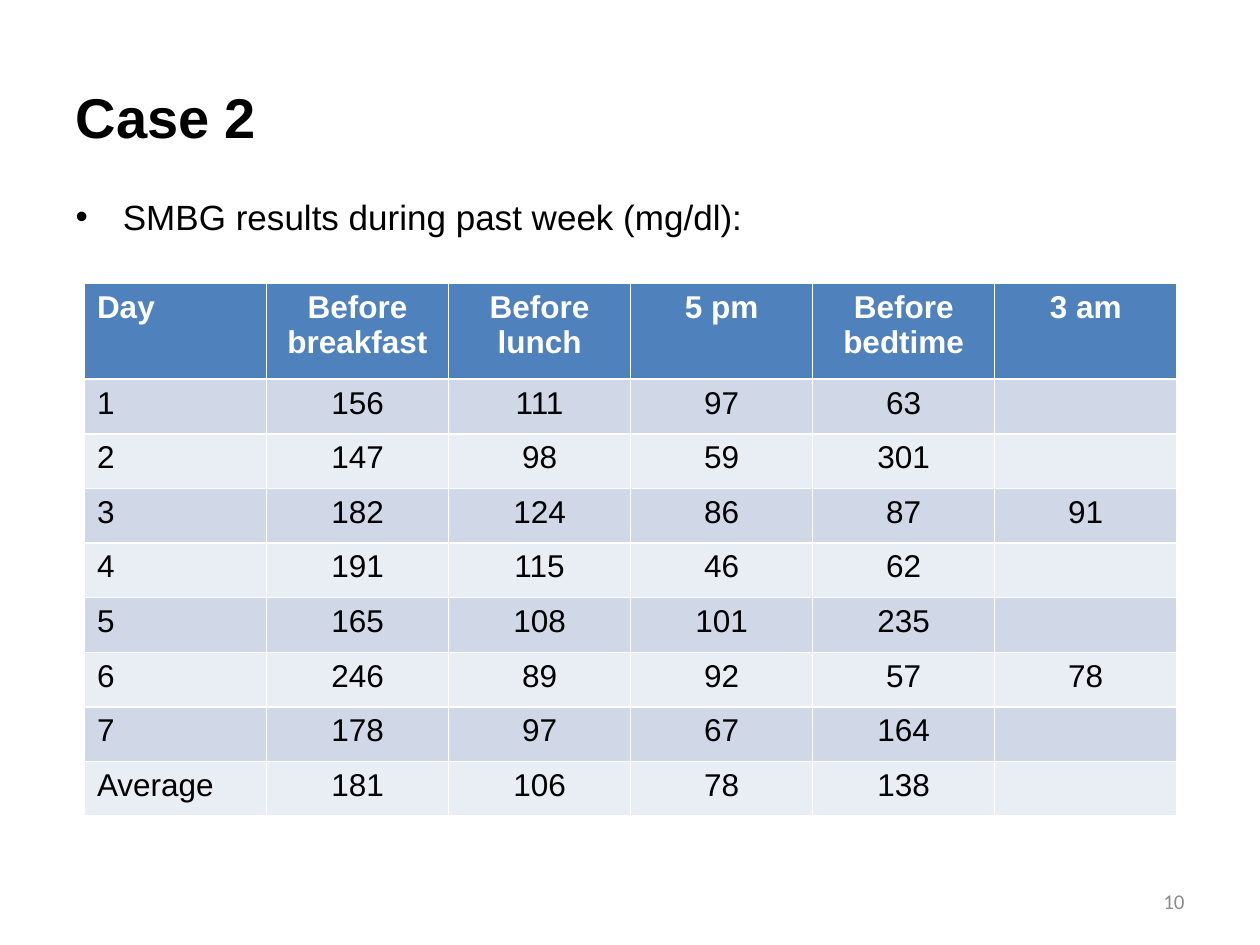
from pptx import Presentation
from pptx.dml.color import RGBColor
from pptx.enum.text import MSO_ANCHOR, PP_ALIGN
from pptx.util import Inches, Pt

COLORS = {
    "text": "000000",
    "header_text": "FFFFFF",
    "header": "4F81BD",
    "odd_row": "D0D8E8",
    "even_row": "E9EDF4",
    "number": "8C8C8C",
}

HEADERS = ["Day", "Before\nbreakfast", "Before lunch", "5 pm", "Before bedtime", "3 am"]
READINGS = [
    ["1", "156", "111", "97", "63", ""],
    ["2", "147", "98", "59", "301", ""],
    ["3", "182", "124", "86", "87", "91"],
    ["4", "191", "115", "46", "62", ""],
    ["5", "165", "108", "101", "235", ""],
    ["6", "246", "89", "92", "57", "78"],
    ["7", "178", "97", "67", "164", ""],
    ["Average", "181", "106", "78", "138", ""],
]


class SlideBuilder:
    """Holds the style and the current slide."""

    def __init__(self, slide, font="Arial"):
        self.s = slide
        self.font = font

    def set_text(self, tf, text, size, color="text", bold=False, align=PP_ALIGN.LEFT, font=None):
        tf.text = text
        for p in tf.paragraphs:
            p.alignment = align
            p.font.size = Pt(size)
            for r in p.runs:
                r.font.name = font or self.font
                r.font.size = Pt(size)
                r.font.bold = bold
                r.font.color.rgb = RGBColor.from_string(COLORS[color])

    def place(self, sp, left, top, width, height):
        sp.left, sp.top = Inches(left), Inches(top)
        sp.width, sp.height = Inches(width), Inches(height)

    def title(self, text, *box):
        sp = self.s.shapes.title
        self.place(sp, *box)
        sp.text_frame.vertical_anchor = MSO_ANCHOR.MIDDLE
        self.set_text(sp.text_frame, text, 32, bold=True)

    def bullets(self, text, *box):
        sp = self.s.placeholders[1]
        self.place(sp, *box)
        self.set_text(sp.text_frame, text, 20, align=PP_ALIGN.JUSTIFY)

    def page_number(self, text, *box):
        tf = self.s.shapes.add_textbox(*map(Inches, box)).text_frame
        tf.word_wrap = True
        tf.vertical_anchor = MSO_ANCHOR.MIDDLE
        self.set_text(tf, text, 12, "number", align=PP_ALIGN.RIGHT, font="Calibri")

    def table(self, rows, header_height, left, top, width, height):
        """The default table style supplies the white borders."""
        box = map(Inches, (left, top, width, height))
        table = self.s.shapes.add_table(len(rows), len(rows[0]), *box).table
        row_height = (height - header_height) / (len(rows) - 1)
        for i, values in enumerate(rows):
            header = i == 0
            table.rows[i].height = Inches(header_height if header else row_height)
            fill = "header" if header else "odd_row" if i % 2 else "even_row"
            for j, value in enumerate(values):
                cell = table.cell(i, j)
                cell.fill.solid()
                cell.fill.fore_color.rgb = RGBColor.from_string(COLORS[fill])
                self.set_text(cell.text_frame, value, 18,
                              "header_text" if header else "text", bold=header,
                              align=PP_ALIGN.CENTER if j else PP_ALIGN.LEFT)


def main():
    prs = Presentation()
    prs.slide_width, prs.slide_height = Inches(10), Inches(7.5)
    builder = SlideBuilder(prs.slides.add_slide(prs.slide_layouts[1]))
    builder.title("Case 2", 0.5, 0.3, 9, 1.25)
    builder.bullets("SMBG results during past week (mg/dl):", 0.5, 1.5, 9, 4.95)
    builder.page_number("10", 7.17, 6.95, 2.33, 0.4)
    builder.table([HEADERS] + READINGS, 0.76, 0.67, 2.25, 8.67, 4.23)
    prs.save("out.pptx")


if __name__ == "__main__":
    main()
